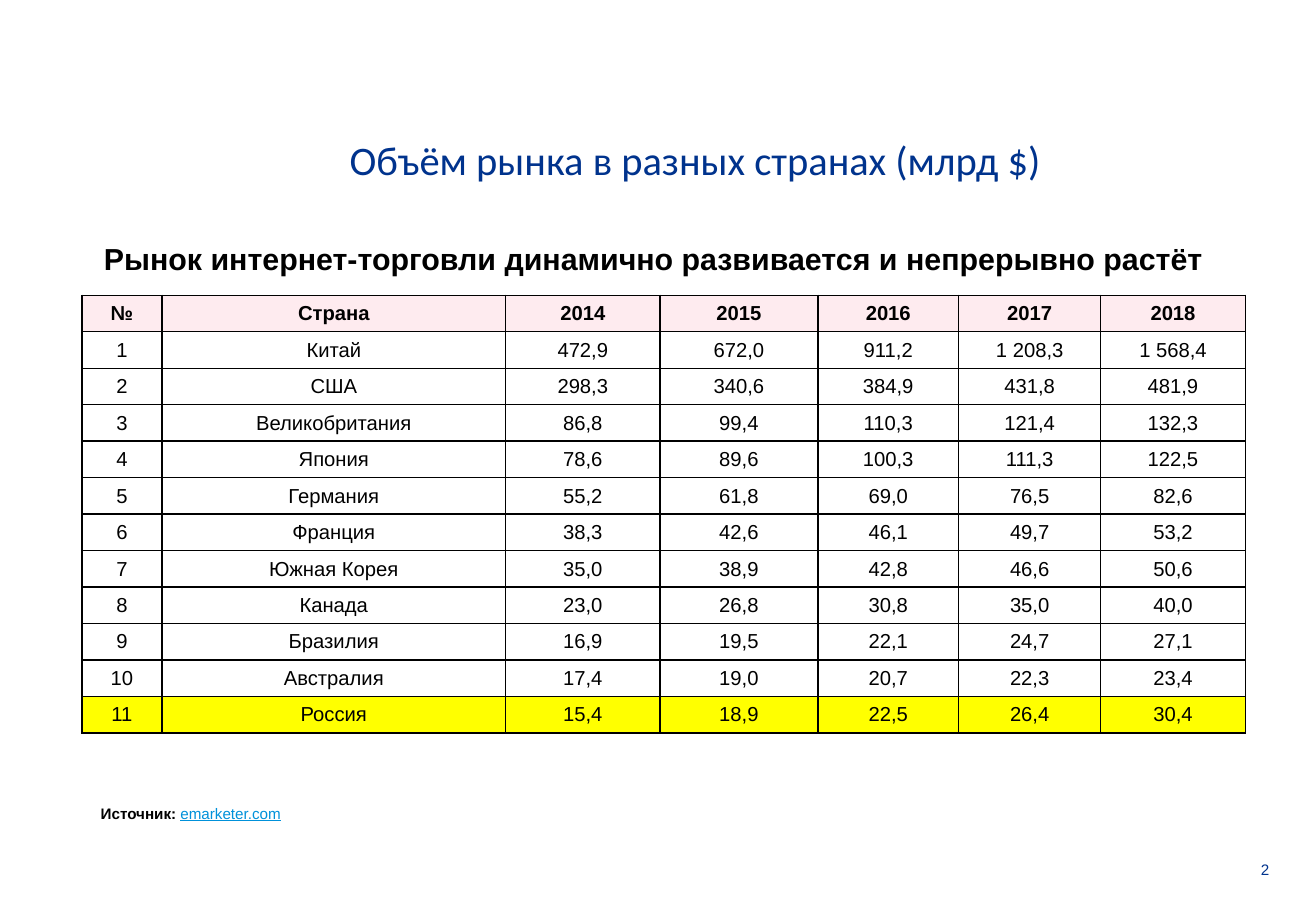
import dataclasses

import pptx
import pptx.dml.color
import pptx.enum.text
import pptx.oxml
import pptx.oxml.ns
import pptx.util

Pt = pptx.util.Pt
ALIGN = pptx.enum.text.PP_ALIGN
ANCHOR = pptx.enum.text.MSO_ANCHOR


@dataclasses.dataclass(frozen=True)
class Theme:
    navy: str = "00338D"
    link: str = "0091DA"
    black: str = "000000"
    header_fill: str = "FEEBEF"
    accent_fill: str = "FFFF00"
    title_font: str = "Calibri"
    body_font: str = "Arial"
    title_size: int = 24
    subtitle_size: int = 18
    table_size: int = 12
    small_size: int = 9


THEME = Theme()

COL_WIDTHS = [47.5, 203.8, 91.4, 93.6, 83.5, 84.2, 85.7]
ROW_HEIGHT = 20.16
HEADER = ["№", "Страна", "2014", "2015", "2016", "2017", "2018"]
MARKETS = [
    ["Китай", "472,9", "672,0", "911,2", "1 208,3", "1 568,4"],
    ["США", "298,3", "340,6", "384,9", "431,8", "481,9"],
    ["Великобритания", "86,8", "99,4", "110,3", "121,4", "132,3"],
    ["Япония", "78,6", "89,6", "100,3", "111,3", "122,5"],
    ["Германия", "55,2", "61,8", "69,0", "76,5", "82,6"],
    ["Франция", "38,3", "42,6", "46,1", "49,7", "53,2"],
    ["Южная Корея", "35,0", "38,9", "42,8", "46,6", "50,6"],
    ["Канада", "23,0", "26,8", "30,8", "35,0", "40,0"],
    ["Бразилия", "16,9", "19,5", "22,1", "24,7", "27,1"],
    ["Австралия", "17,4", "19,0", "20,7", "22,3", "23,4"],
    ["Россия", "15,4", "18,9", "22,5", "26,4", "30,4"],
]


def rgb(color):
    return pptx.dml.color.RGBColor.from_string(color)


def style_run(r, size, color=THEME.black, bold=False, font=THEME.body_font):
    r.font.name = font
    r.font.size = Pt(size)
    r.font.bold = bold
    r.font.color.rgb = rgb(color)


def add_text(s, box, text, size, align=ALIGN.LEFT, inset=True, **style):
    sp = s.shapes.add_textbox(*map(Pt, box))
    tf = sp.text_frame
    tf.word_wrap = True
    if not inset:
        tf.margin_left = tf.margin_right = tf.margin_top = tf.margin_bottom = 0
    p = tf.paragraphs[0]
    p.text = text
    p.alignment = align
    style_run(p.runs[0], size, **style)
    return p


def set_borders(cell, width=1):
    tc_pr = cell._tc.get_or_add_tcPr()
    for i, side in enumerate(("lnL", "lnR", "lnT", "lnB")):
        ln = pptx.oxml.parse_xml(
            f'<a:{side} {pptx.oxml.ns.nsdecls("a")} w="{Pt(width)}"><a:solidFill>'
            f'<a:srgbClr val="{THEME.black}"/></a:solidFill></a:{side}>')
        tc_pr.insert(i, ln)


def fill_cell(cell, text, fill, bold):
    if fill:
        cell.fill.solid()
        cell.fill.fore_color.rgb = rgb(fill)
    else:
        cell.fill.background()
    set_borders(cell)
    cell.vertical_anchor = ANCHOR.MIDDLE
    p = cell.text_frame.paragraphs[0]
    p.text = text
    p.alignment = ALIGN.CENTER
    style_run(p.runs[0], THEME.table_size, bold=bold)


def add_market_table(s, left, top):
    rows = [HEADER] + [[str(n), *row] for n, row in enumerate(MARKETS, 1)]
    fills = {0: THEME.header_fill, len(rows) - 1: THEME.accent_fill}
    frame = s.shapes.add_table(len(rows), len(HEADER), Pt(left), Pt(top),
                               Pt(sum(COL_WIDTHS)), Pt(ROW_HEIGHT * len(rows)))
    table = frame.table
    table.first_row = True
    table.horz_banding = False
    for col, width in zip(table.columns, COL_WIDTHS):
        col.width = Pt(width)
    for i, row in enumerate(rows):
        table.rows[i].height = Pt(ROW_HEIGHT)
        for j, text in enumerate(row):
            fill_cell(table.cell(i, j), text, fills.get(i), bold=i == 0)


def main():
    prs = pptx.Presentation()
    prs.slide_width, prs.slide_height = Pt(780), Pt(540)
    s = prs.slides.add_slide(prs.slide_layouts[6])

    # Page number
    add_text(s, (721.4, 509.8, 31, 11.5), "2", THEME.small_size,
             align=ALIGN.RIGHT, inset=False, color=THEME.navy)

    # Title
    add_text(s, (200.2, 76.3, 537.8, 36.7), "Объём рынка в разных странах (млрд $)",
             THEME.title_size, color=THEME.navy, font=THEME.title_font)

    # Market table
    add_market_table(s, 48.5, 175)

    # Subtitle
    p = add_text(s, (52.6, 135.4, 674.6, 32.4),
                 "Рынок интернет-торговли динамично развивается и непрерывно растёт ",
                 THEME.subtitle_size, align=ALIGN.CENTER, bold=True)
    p.line_spacing = 1.15

    # Source
    p = add_text(s, (52.6, 473, 674.6, 28.8), "Источник: ", THEME.small_size, bold=True)
    r = p.add_run()
    r.text = "emarketer.com"
    style_run(r, THEME.small_size, color=THEME.link)
    r.font.underline = True

    prs.save("out.pptx")


if __name__ == "__main__":
    main()
